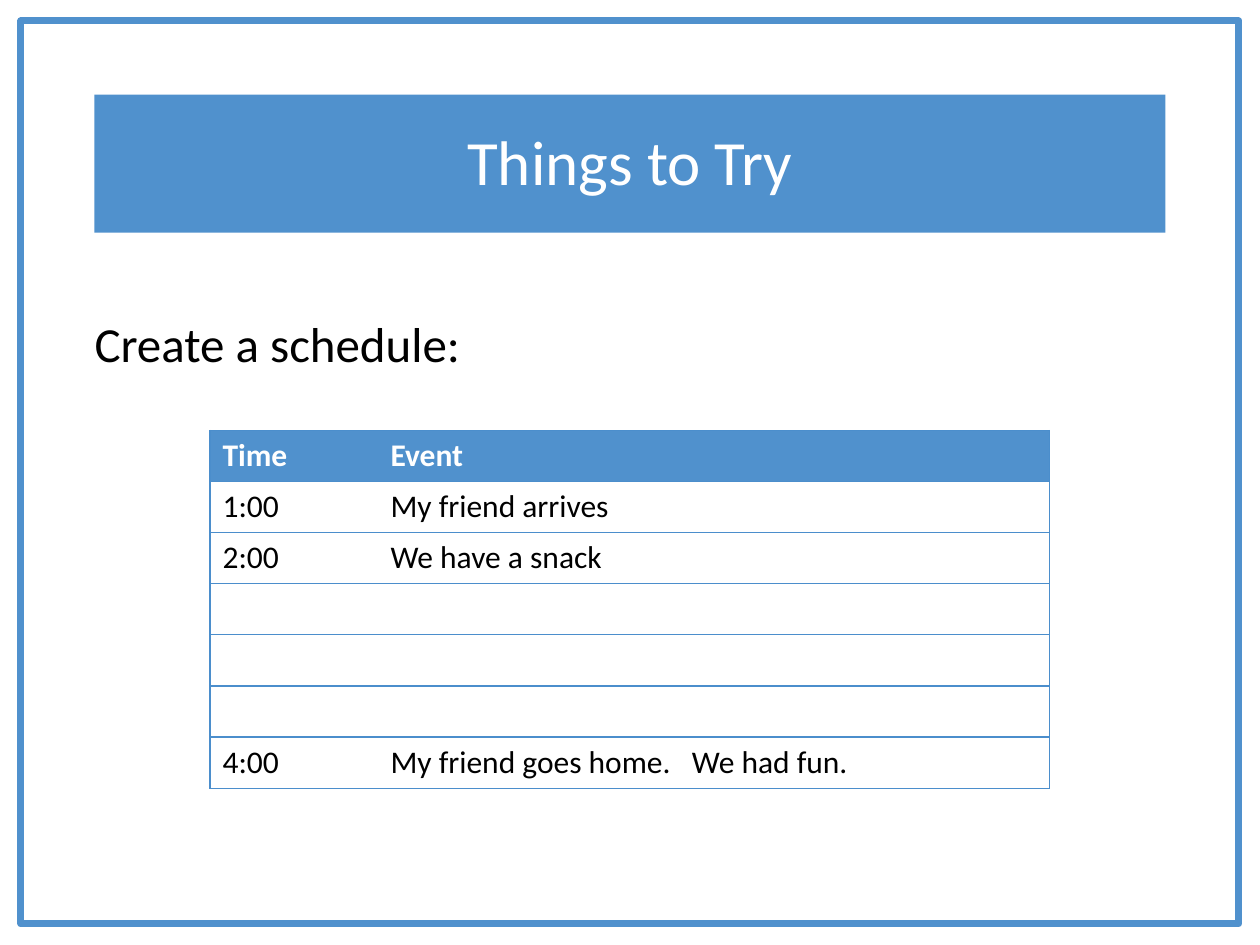
from dataclasses import dataclass

from lxml.etree import SubElement
from pptx import Presentation
from pptx.dml.color import RGBColor
from pptx.enum.shapes import MSO_SHAPE
from pptx.enum.text import MSO_ANCHOR, MSO_AUTO_SIZE, PP_ALIGN
from pptx.oxml.ns import qn
from pptx.util import Pt


@dataclass(frozen=True)
class Theme:
    font: str = "Calibri"
    accent: str = "5091CD"
    rule: str = "4B8ECC"
    white: str = "FFFFFF"
    black: str = "000000"
    title_size: float = 36
    body_size: float = 28
    table_size: float = 18
    frame_width: float = 4
    rule_width: float = 0.75


class SlideBuilder:
    def __init__(self, slide, theme):
        self.slide = slide
        self.theme = theme

    def style(self, paragraph, size, color, bold=False):
        font = paragraph.font
        font.name = self.theme.font
        font.size = Pt(size)
        font.bold = bold
        font.color.rgb = RGBColor.from_string(color)

    def rectangle(self, box, fill=None, line=None):
        rectangle = self.slide.shapes.add_shape(MSO_SHAPE.RECTANGLE, *map(Pt, box))
        rectangle.shadow.inherit = False
        if fill:
            rectangle.fill.solid()
            rectangle.fill.fore_color.rgb = RGBColor.from_string(fill)
        else:
            rectangle.fill.background()
        if line:
            rectangle.line.color.rgb = RGBColor.from_string(line)
            rectangle.line.width = Pt(self.theme.frame_width)
        else:
            rectangle.line.fill.background()

    def placeholder(self, index, box, text, size, color, align, space_before=0):
        """Fill a template placeholder and bring it in front of the shapes drawn so far."""
        holder = self.slide.placeholders[index]
        holder.left, holder.top, holder.width, holder.height = map(Pt, box)
        frame = holder.text_frame
        frame.text = text
        frame.word_wrap = True
        frame.auto_size = MSO_AUTO_SIZE.NONE
        frame.vertical_anchor = MSO_ANCHOR.MIDDLE
        frame.margin_left = frame.margin_right = frame.margin_top = frame.margin_bottom = 0
        paragraph = frame.paragraphs[0]
        paragraph.alignment = align
        paragraph.line_spacing = 0.9
        paragraph.space_before = Pt(space_before)
        self.style(paragraph, size, color)
        properties = paragraph.font._element.getparent()
        properties.set("marL", "0")
        properties.set("indent", "0")
        properties.insert_element_before(
            properties.makeelement(qn("a:buNone")), "a:tabLst", "a:defRPr", "a:extLst")
        holder.element.getparent().append(holder.element)

    def cell_borders(self, cell, ruled_sides):
        properties = cell._tc.get_or_add_tcPr()
        for side in "LRTB":
            border = SubElement(properties, qn(f"a:ln{side}"),
                                w=str(Pt(self.theme.rule_width)))
            if side in ruled_sides:
                fill = SubElement(border, qn("a:solidFill"))
                SubElement(fill, qn("a:srgbClr"), val=self.theme.rule)
            else:
                SubElement(border, qn("a:noFill"))

    def table(self, left, top, column_widths, row_height, rows):
        """Draw a table with a filled header, an outer border and lines between rows."""
        theme = self.theme
        last = len(column_widths) - 1
        table = self.slide.shapes.add_table(
            len(rows), len(column_widths), Pt(left), Pt(top),
            Pt(sum(column_widths)), Pt(row_height * len(rows))).table
        table.horz_banding = False
        for column, width in zip(table.columns, column_widths):
            column.width = Pt(width)
        for r, texts in enumerate(rows):
            table.rows[r].height = Pt(row_height)
            header = r == 0
            for c, text in enumerate(texts):
                cell = table.cell(r, c)
                cell.text = text
                self.style(cell.text_frame.paragraphs[0], theme.table_size,
                           theme.white if header else theme.black, bold=header)
                self.cell_borders(cell, "TB" + "L" * (c == 0) + "R" * (c == last))
                if header:
                    cell.fill.solid()
                    cell.fill.fore_color.rgb = RGBColor.from_string(theme.accent)
                else:
                    cell.fill.background()


def main():
    presentation = Presentation()
    presentation.slide_width = Pt(720)
    presentation.slide_height = Pt(540)
    theme = Theme()
    slide = presentation.slides.add_slide(presentation.slide_layouts[1])
    builder = SlideBuilder(slide, theme)

    builder.rectangle((12, 12, 696, 516), line=theme.accent)
    builder.rectangle((54, 54, 612, 79), fill=theme.accent)
    builder.placeholder(0, (72, 63, 576, 63), "Things to Try",
                        theme.title_size, theme.white, PP_ALIGN.CENTER)
    builder.placeholder(1, (54, 162, 612, 72), "Create a schedule:",
                        theme.body_size, theme.black, PP_ALIGN.LEFT, space_before=18)

    schedule = [
        ("Time", "Event"),
        ("1:00", "My friend arrives"),
        ("2:00", "We have a snack"),
        *[("", "")] * 3,
        ("4:00", "My friend goes home.   We had fun."),
    ]
    builder.table(120, 246, (96, 384), 29.2, schedule)
    presentation.save("out.pptx")


if __name__ == "__main__":
    main()
